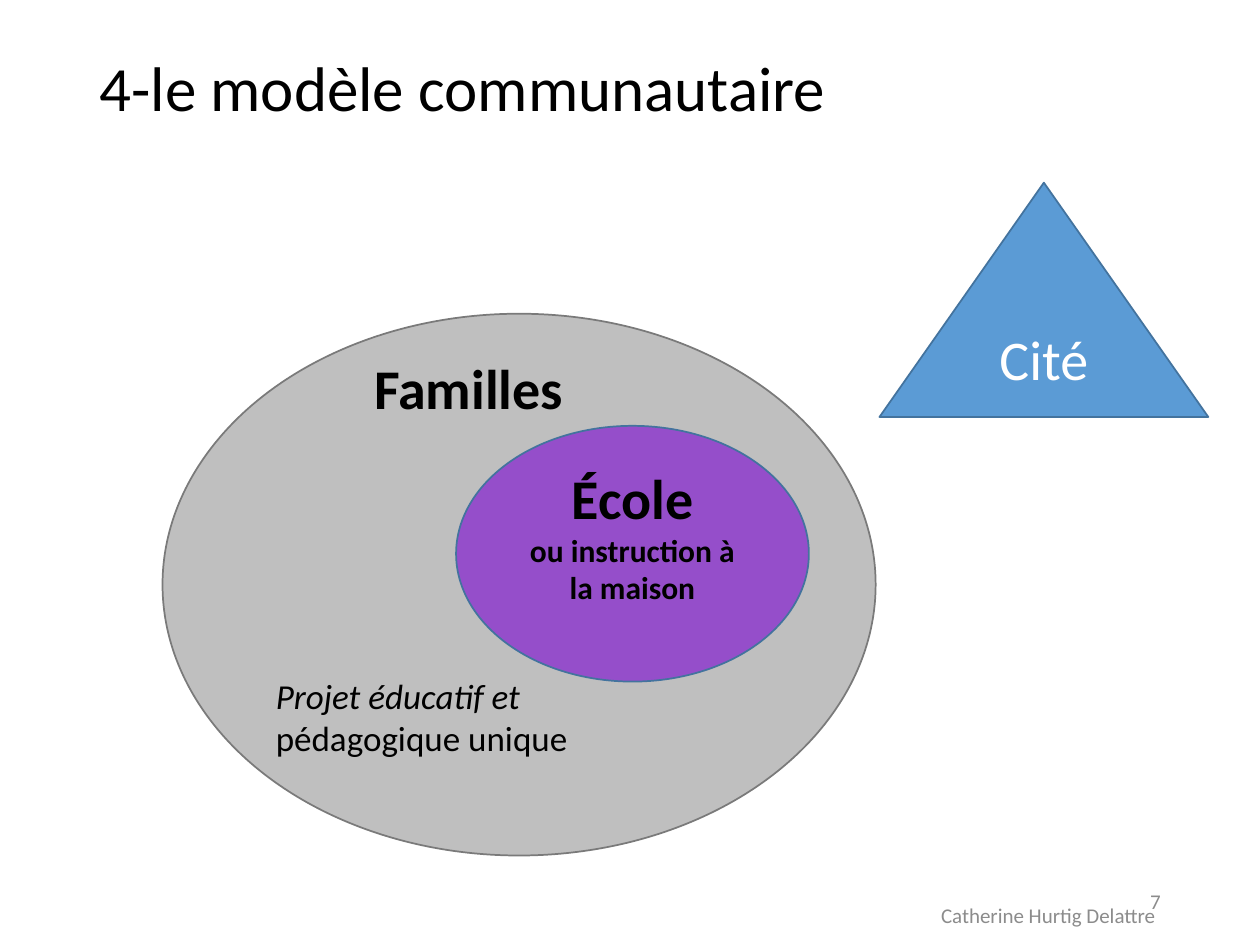
from pptx import Presentation
from pptx.dml.color import RGBColor
from pptx.enum.shapes import MSO_SHAPE
from pptx.enum.text import MSO_ANCHOR, PP_ALIGN
from pptx.util import Inches, Pt

OVAL, TRIANGLE = MSO_SHAPE.OVAL, MSO_SHAPE.ISOSCELES_TRIANGLE
TOP, MIDDLE = MSO_ANCHOR.TOP, MSO_ANCHOR.MIDDLE
LEFT, CENTER, RIGHT = PP_ALIGN.LEFT, PP_ALIGN.CENTER, PP_ALIGN.RIGHT
TITLE_ONLY = 5
FONT = "Calibri"
BLACK, WHITE, FOOTER_GREY = "000000", "FFFFFF", "8C8C8C"
BLUE_EDGE = "43739E"


def color(value):
    return RGBColor.from_string(value)


def inches(*lengths):
    return [Inches(length) for length in lengths]


def write(shape, lines, ink=BLACK, align=LEFT, anchor=TOP):
    """Fill a shape with lines given as (text, size, bold, italic)."""
    frame = shape.text_frame
    frame.word_wrap = True
    frame.vertical_anchor = anchor
    for index, (text, size, bold, italic) in enumerate(lines):
        para = frame.add_paragraph() if index else frame.paragraphs[0]
        para.text = text
        para.alignment = align
        para.font.name = FONT
        para.font.size = Pt(size)
        para.font.bold = bold
        para.font.italic = italic
        para.font.color.rgb = color(ink)


def add_title(slide, text):
    title = slide.shapes.title
    title.left, title.top, title.width, title.height = inches(0.69, 0.4, 8.62, 1.28)
    write(title, [(text, 36, False, False)])
    title.text_frame.paragraphs[0].line_spacing = 0.9


def add_figure(slide, kind, area, fill, edge):
    figure = slide.shapes.add_shape(kind, *inches(*area))
    figure.shadow.inherit = False
    figure.fill.solid()
    figure.fill.fore_color.rgb = color(fill)
    figure.line.color.rgb = color(edge)
    figure.line.width = Pt(1)
    return figure


def add_text(slide, area, lines, **style):
    write(slide.shapes.add_textbox(*inches(*area)), lines, **style)


def main():
    deck = Presentation()
    deck.slide_width, deck.slide_height = inches(10, 7.5)
    slide = deck.slides.add_slide(deck.slide_layouts[TITLE_ONLY])
    add_title(slide, "4-le modèle communautaire")

    add_figure(slide, OVAL, (1.29, 2.49, 5.66, 4.3), "BFBFBF", "7A7A7A")
    school = add_figure(slide, OVAL, (3.62, 3.38, 2.8, 2.03), "954ECA", BLUE_EDGE)
    write(school, [("École", 32, True, False),
                   ("ou instruction à la maison", 18, True, False)],
          align=CENTER, anchor=MIDDLE)
    school.text_frame.margin_bottom = Inches(0.35)

    add_text(slide, (2.87, 2.76, 3.32, 0.64), [("Familles", 32, True, False)])
    add_text(slide, (2.09, 5.3, 4.11, 0.78),
             [("Projet éducatif et", 20, False, True),
              ("pédagogique unique", 20, False, False)])

    footer = {"ink": FOOTER_GREY, "anchor": MIDDLE}
    add_text(slide, (6.63, 7.06, 3.38, 0.4),
             [("Catherine Hurtig Delattre", 12, False, False)], align=CENTER, **footer)
    add_text(slide, (7.06, 6.95, 2.25, 0.4),
             [("7", 12, False, False)], align=RIGHT, **footer)

    city = add_figure(slide, TRIANGLE, (6.98, 1.45, 2.61, 1.86), "5B9BD5", BLUE_EDGE)
    write(city, [("Cité", 32, False, False)], ink=WHITE, align=CENTER, anchor=MIDDLE)

    deck.save("out.pptx")


if __name__ == "__main__":
    main()
